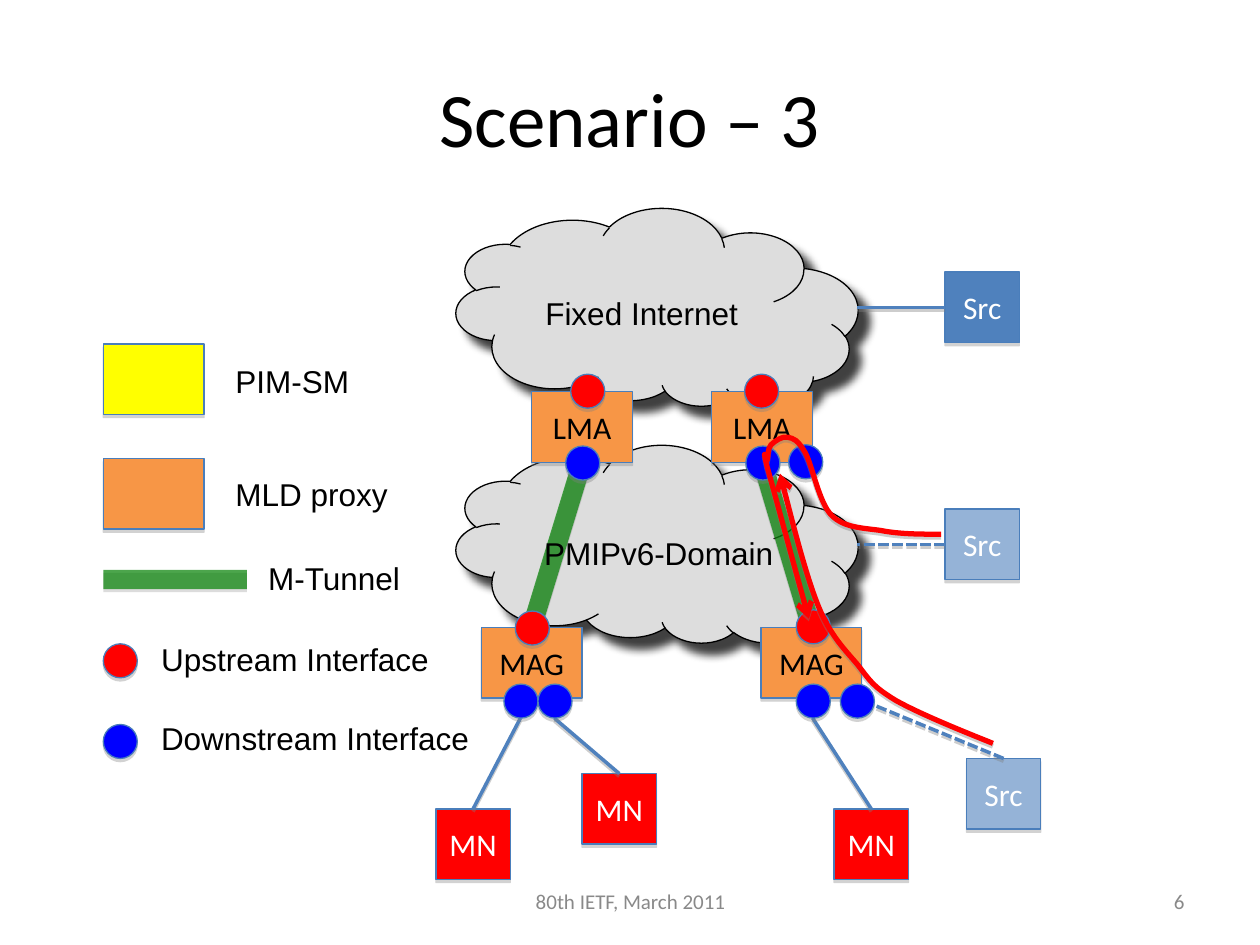
from lxml.etree import SubElement
from pptx import Presentation
from pptx.dml.color import RGBColor
from pptx.enum.dml import MSO_LINE
from pptx.enum.shapes import MSO_CONNECTOR, MSO_SHAPE
from pptx.enum.text import MSO_ANCHOR, PP_ALIGN
from pptx.oxml.ns import qn
from pptx.util import Pt

PX = 9144  # 100 px to the inch
THEME = {
    "black": "000000", "white": "FFFFFF", "grey": "898989", "cloud": "DDDDDD",
    "orange": "F79646", "yellow": "FFFF00", "red": "FF0000", "blue": "0000FF",
    "src": "4F81BD", "pale": "95B3D7", "edge": "4A7EBB", "green": "008000",
    "head": 44, "body": 18, "foot": 12, "sans": "Calibri", "label": "Arial",
}
# shadow: colour, opacity %, blur pt, distance pt, angle
BOX_SHADE = ("808080", 35, 0, 1.8, 90)
LINE_SHADE = ("808080", 38, 0, 1.6, 90)
CLOUD_SHADE = ("000000", 75, 5, 8.5, 45)
LEFT, MID, RIGHT = PP_ALIGN.LEFT, PP_ALIGN.CENTER, PP_ALIGN.RIGHT


def paint(shape, line, width, shade, fill=None):
    """Set fill, line and shadow; the shadow goes last in the properties."""
    if fill:
        shape.fill.solid()
        shape.fill.fore_color.rgb = RGBColor.from_string(THEME[fill])
    shape.line.color.rgb = RGBColor.from_string(THEME[line])
    shape.line.width = Pt(width)
    color, alpha, blur, dist, angle = shade
    props = shape._element.spPr
    for old in props.findall(qn("a:effectLst")):
        props.remove(old)
    outer = SubElement(SubElement(props, qn("a:effectLst")), qn("a:outerShdw"))
    for key, val in {"blurRad": Pt(blur), "dist": Pt(dist),
                     "dir": angle * 60000, "algn": "ctr", "rotWithShape": 0}.items():
        outer.set(key, str(int(val)) if key != "algn" else val)
    tint = SubElement(outer, qn("a:srgbClr"), val=color)
    SubElement(tint, qn("a:alpha"), val=str(alpha * 1000))


def write(shape, text, color, size="body", face="sans", align=MID):
    frame = shape.text_frame
    frame.text = text
    frame.word_wrap = True
    frame.vertical_anchor = MSO_ANCHOR.MIDDLE
    para = frame.paragraphs[0]
    para.alignment = align
    para.font.color.rgb = RGBColor.from_string(THEME[color])
    for key, val in {"size": Pt(THEME[size]), "name": THEME[face]}.items():
        setattr(para.font, key, val)


deck = Presentation()
deck.slide_width, deck.slide_height = 1000 * PX, 750 * PX
slide = deck.slides.add_slide(deck.slide_layouts[5])
shapes = slide.shapes

title = shapes.title
for key, val in {"left": 50, "top": 30, "width": 900, "height": 125}.items():
    setattr(title, key, val * PX)
write(title, "Scenario – 3", "black", "head")

for top in (166, 354):
    cloud = shapes.add_shape(MSO_SHAPE.CLOUD, 362 * PX, top * PX, 319 * PX, 157 * PX)
    cloud._element.spPr.xfrm.set("flipV", "1")
    paint(cloud, "black", 0.75, CLOUD_SHADE, "cloud")

# Nodes and legend swatches: name, text, left, top, width, fill, text colour
nodes = {}
for name, text, left, top, width, fill, ink in (
    ("lma1", "LMA", 422, 311, 80, "orange", "black"),
    ("lma2", "LMA", 565, 311, 80, "orange", "black"),
    ("mag1", "MAG", 382, 498, 80, "orange", "black"),
    ("mag2", "MAG", 604, 498, 80, "orange", "black"),
    ("src1", "Src", 750, 216, 59, "src", "white"),
    ("src2", "Src", 750, 404, 59, "pale", "white"),
    ("src3", "Src", 767, 602, 59, "pale", "white"),
    ("mn1", "MN", 346, 642, 59, "red", "white"),
    ("mn2", "MN", 462, 614, 59, "red", "white"),
    ("mn3", "MN", 662, 642, 59, "red", "white"),
    ("pim", "", 82, 273, 80, "yellow", "black"),
    ("mld", "", 82, 364, 80, "orange", "black"),
):
    node = shapes.add_shape(MSO_SHAPE.RECTANGLE, left * PX, top * PX, width * PX, 56 * PX)
    paint(node, "edge", 0.75, BOX_SHADE, fill)
    if text:
        write(node, text, ink)
        node.text_frame.margin_left = node.text_frame.margin_right = 0
    nodes[name] = node

# Lines: start, end, style, and the node sides they join
STYLES = {"tunnel": ("green", 11), "link": ("src", 2), "dash": ("src", 2)}
for start, end, style, begin, finish in (
    ((462, 367), (422, 498), "tunnel", ("lma1", 2), ("mag1", 0)),
    ((605, 367), (644, 498), "tunnel", ("lma2", 2), ("mag2", 0)),
    ((196, 460), (82, 460), "tunnel", None, None),
    ((750, 244), (680, 244), "link", ("src1", 1), None),
    ((413, 570), (375, 642), "link", None, ("mn1", 0)),
    ((440, 570), (492, 614), "link", None, ("mn2", 0)),
    ((645, 570), (691, 642), "link", None, ("mn3", 0)),
    ((750, 432), (680, 432), "dash", ("src2", 1), None),
    ((796, 602), (680, 554), "dash", ("src3", 0), None),
):
    ends = [v * PX for v in start + end]
    wire = shapes.add_connector(MSO_CONNECTOR.STRAIGHT, *ends)
    if begin:
        wire.begin_connect(nodes[begin[0]], begin[1])
    if finish:
        wire.end_connect(nodes[finish[0]], finish[1])
    paint(wire, *STYLES[style], LINE_SHADE)
    if style == "dash":
        wire.line.dash_style = MSO_LINE.SQUARE_DOT
    if style == "tunnel":
        tint = wire.line._ln.find(".//" + qn("a:srgbClr"))
        SubElement(tint, qn("a:alpha"), val="70000")

# Labels and footer
for text, left, top, width in (
    ("Fixed Internet", 423, 228, 180), ("PMIPv6-Domain", 422, 419, 204),
    ("PIM-SM", 177, 282, 111), ("MLD proxy", 177, 372, 142),
    ("M-Tunnel", 203, 439, 126), ("Upstream Interface", 118, 503, 235),
    ("Downstream Interface", 118, 566, 267),
):
    label = shapes.add_textbox(left * PX, top * PX, width * PX, 40 * PX)
    write(label, text, "black", face="label", align=LEFT)
    label.text_frame.margin_right = 0
for text, left, width, align in (
    ("80th IETF, March 2011", 342, 317, MID), ("6", 717, 233, RIGHT),
):
    foot = shapes.add_textbox(left * PX, 695 * PX, width * PX, 40 * PX)
    write(foot, text, "grey", "foot", align=align)

# Interfaces in two layers, each followed or preceded by a multicast route
LOW = (("red", 82, 511), ("blue", 82, 575), ("red", 409, 485), ("red", 632, 484),
       ("blue", 400, 543), ("blue", 427, 543), ("blue", 632, 543),
       ("blue", 449, 354), ("red", 453, 297))
HIGH = (("blue", 667, 543), ("red", 591, 297), ("blue", 626, 353), ("blue", 592, 354))
# Routes: a start, then three Bézier points for each curve
UP = ((788, 590), (758, 578), (729, 566), (711, 556), (693, 545), (691, 541),
      (681, 528), (671, 516), (659, 505), (649, 480), (639, 455), (619, 376), (619, 376))
DOWN = ((747, 424), (731, 424), (714, 424), (699, 421), (685, 419), (670, 419),
        (660, 409), (650, 399), (645, 370), (639, 359), (633, 349), (630, 348),
        (625, 347), (621, 346), (615, 350), (612, 353), (609, 356), (610, 362),
        (609, 365), (609, 368), (604, 350), (609, 371), (615, 392), (628, 441), (642, 491))
for dots, route in ((LOW, UP), (HIGH, DOWN)):
    for fill, left, top in dots:
        dot = shapes.add_shape(MSO_SHAPE.OVAL, left * PX, top * PX, 27 * PX, 27 * PX)
        paint(dot, "edge", 0.75, BOX_SHADE, fill)
    pen = shapes.build_freeform(*route[0], scale=PX)
    pen.add_line_segments(route[1:], close=False)
    curve = pen.convert_to_shape()
    curve.fill.background()
    paint(curve, "red", 3, LINE_SHADE)
    SubElement(curve.line._ln, qn("a:tailEnd"), type="arrow")
    # Turn each run of three line segments into one cubic curve
    track = curve._element.spPr.find(".//" + qn("a:path"))
    steps = track.findall(qn("a:lnTo"))
    for i in range(0, len(steps), 3):
        bend = SubElement(track, qn("a:cubicBezTo"))
        for step in steps[i:i + 3]:
            bend.append(step[0])
            track.remove(step)

deck.save("out.pptx")
